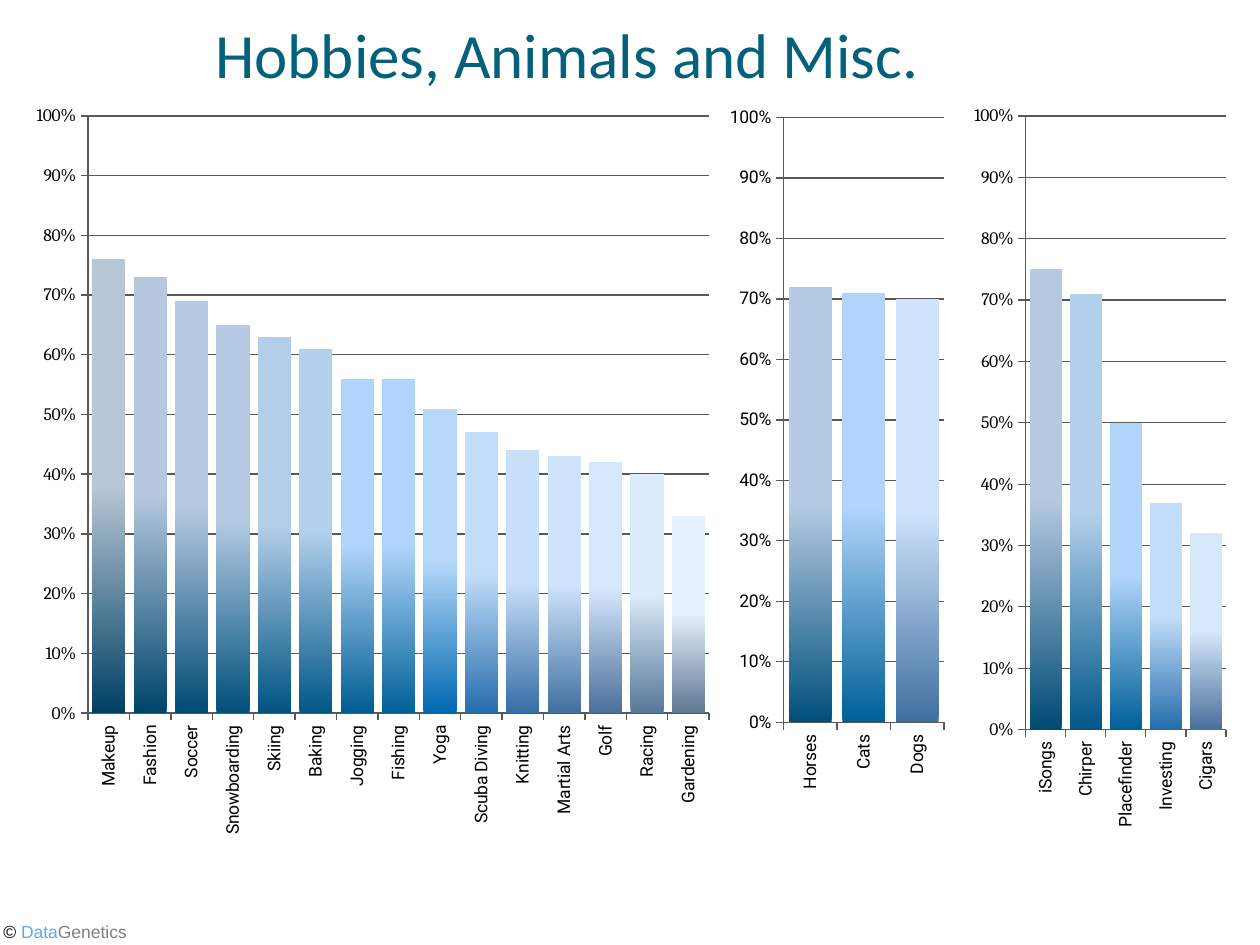
from lxml import etree
from pptx import Presentation
from pptx.chart.data import CategoryChartData
from pptx.dml.color import RGBColor
from pptx.enum.chart import XL_CHART_TYPE, XL_TICK_MARK
from pptx.enum.text import MSO_ANCHOR, PP_ALIGN
from pptx.oxml.ns import qn
from pptx.util import Cm, Pt

COLUMNS = XL_CHART_TYPE.COLUMN_CLUSTERED
OUTSIDE, NO_TICK = XL_TICK_MARK.OUTSIDE, XL_TICK_MARK.NONE
CENTER, MIDDLE = PP_ALIGN.CENTER, MSO_ANCHOR.MIDDLE

THEME = {
    "title_font": "Calibri", "title_size": 36, "title": "04617B",
    "footer_font": "Arial", "label_font": "Roboto", "small_size": 10,
    "text": "000000", "line": "595959",
    "tones": [
        ("004063", "B7C6D5"), ("00456B", "B5C8DF"), ("004B75", "B5C9E1"),
        ("00507C", "B5CBE4"), ("005482", "B3CEE9"), ("005788", "B2D0EC"),
        ("005D92", "B0D4FA"), ("006098", "B0D4FA"), ("0068B0", "B6D8FB"),
        ("266DAC", "C2DDFA"), ("366EA5", "C9E0FA"), ("4070A0", "CFE3FC"),
        ("4A709D", "D6E7FB"), ("567898", "DCECFB"), ("607894", "E3EFFB"),
    ],
}

TITLE = "Hobbies, Animals and Misc."
COPYRIGHT = [("© ", "000000"), ("Data", "59AAF2"), ("Genetics", "808080")]

CHARTS = [
    {
        "place": (0.51, 1.88, 14.07, 15.24),
        "plot": (0.09, 0.03, 0.89, 0.79),
        "value_font": "Cambria",
        "tones": range(15),
        "data": [
            ("Makeup", 0.76), ("Fashion", 0.73), ("Soccer", 0.69),
            ("Snowboarding", 0.65), ("Skiing", 0.63), ("Baking", 0.61),
            ("Jogging", 0.56), ("Fishing", 0.56), ("Yoga", 0.51),
            ("Scuba Diving", 0.47), ("Knitting", 0.44), ("Martial Arts", 0.43),
            ("Golf", 0.42), ("Racing", 0.40), ("Gardening", 0.33),
        ],
    },
    {
        "place": (14.45, 1.88, 4.98, 16.26),
        "plot": (0.27, 0.03, 0.65, 0.75),
        "value_font": "Roboto",
        "tones": (3, 7, 11),
        "data": [("Horses", 0.72), ("Cats", 0.71), ("Dogs", 0.70)],
    },
    {
        "place": (19.35, 1.85, 5.77, 16.28),
        "plot": (0.23, 0.03, 0.70, 0.76),
        "value_font": "Cambria",
        "tones": (2, 5, 7, 9, 12),
        "data": [
            ("iSongs", 0.75), ("Chirper", 0.71), ("Placefinder", 0.50),
            ("Investing", 0.37), ("Cigars", 0.32),
        ],
    },
]


def style_font(font, name, size, color):
    font.name, font.size = name, Pt(size)
    font.color.rgb = RGBColor.from_string(color)


def style_line(line):
    line.color.rgb = RGBColor.from_string(THEME["line"])
    line.width = Pt(0.75)


def set_plot_layout(chart, fractions):
    area = chart._chartSpace.chart.plotArea
    for layout in area.findall(qn("c:layout")):
        area.remove(layout)
    layout = etree.Element(qn("c:layout"))
    manual = etree.SubElement(layout, qn("c:manualLayout"))
    settings = [("layoutTarget", "inner"), ("xMode", "edge"), ("yMode", "edge")]
    settings += zip("xywh", fractions)
    for tag, value in settings:
        etree.SubElement(manual, qn("c:" + tag)).set("val", str(value))
    area.insert(0, layout)


def style_axis(axis, font_name):
    axis.major_tick_mark, axis.minor_tick_mark = OUTSIDE, NO_TICK
    style_font(axis.tick_labels.font, font_name, THEME["small_size"], THEME["text"])
    style_line(axis.format.line)


def add_column_chart(page, item):
    data = CategoryChartData(number_format="0%")
    data.categories = [name for name, _ in item["data"]]
    data.add_series("Series 1", [value for _, value in item["data"]])
    place = [Cm(length) for length in item["place"]]
    chart = page.shapes.add_chart(COLUMNS, *place, data).chart
    chart.has_legend = chart.has_title = False
    style_font(chart.font, item["value_font"], THEME["small_size"], THEME["text"])
    set_plot_layout(chart, item["plot"])

    categories, values = chart.category_axis, chart.value_axis
    style_axis(categories, THEME["label_font"])
    categories._element.txPr.bodyPr.set("rot", "-5400000")
    style_axis(values, item["value_font"])
    values.minimum_scale, values.maximum_scale, values.major_unit = 0, 1, 0.1
    values.tick_labels.number_format = "0%"
    values.tick_labels.number_format_is_linked = False
    values.has_major_gridlines = True
    style_line(values.major_gridlines.format.line)

    plot = chart.plots[0]
    plot.gap_width, plot.vary_by_categories = 25, False
    for index, tone in enumerate(item["tones"]):
        fill = plot.series[0].points[index].format.fill
        fill.gradient()
        fill.gradient_angle = 90
        for stop, color, position in zip(fill.gradient_stops, THEME["tones"][tone], (0, 0.5)):
            stop.color.rgb = RGBColor.from_string(color)
            stop.position = position


def add_title(page):
    title = page.shapes.title
    title.left, title.top, title.width, title.height = Cm(0), Cm(-0.51), Cm(22.86), Cm(3.18)
    title.text_frame.text = TITLE
    title.text_frame.vertical_anchor = MIDDLE
    para = title.text_frame.paragraphs[0]
    para.alignment = CENTER
    style_font(para.runs[0].font, THEME["title_font"], THEME["title_size"], THEME["title"])


def add_copyright(page):
    box = page.shapes.add_textbox(Cm(-0.18), Cm(18.44), Cm(4.01), Cm(1.47))
    box.text_frame.word_wrap = True
    para = box.text_frame.paragraphs[0]
    for words, color in COPYRIGHT:
        span = para.add_run()
        span.text = words
        style_font(span.font, THEME["footer_font"], THEME["small_size"], color)


def main():
    deck = Presentation()
    deck.slide_width, deck.slide_height = Cm(25.4), Cm(19.05)
    page = deck.slides.add_slide(deck.slide_layouts[5])
    add_copyright(page)
    add_title(page)
    for item in CHARTS:
        add_column_chart(page, item)
    deck.save("out.pptx")


if __name__ == "__main__":
    main()
